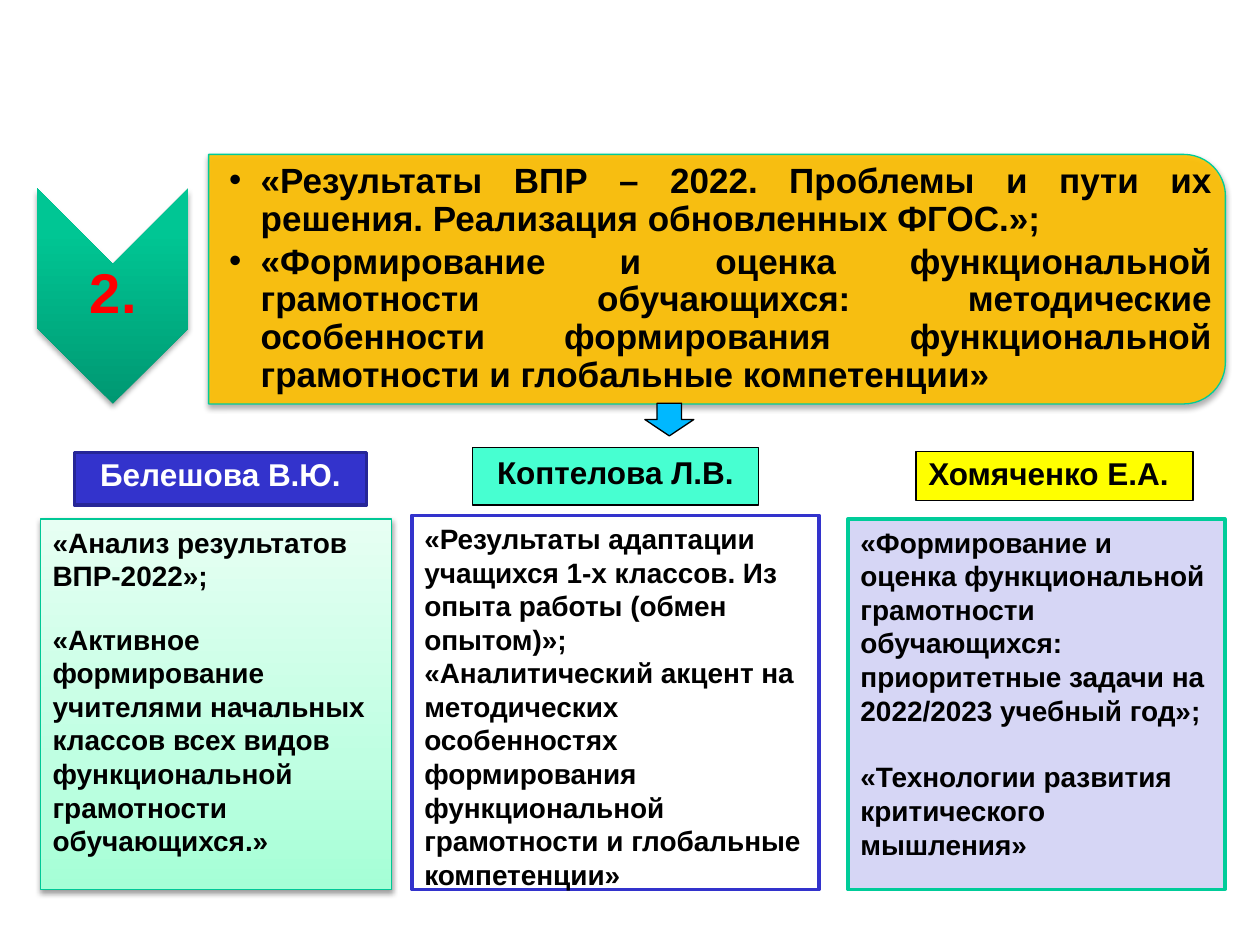
from lxml import etree
from pptx import Presentation
from pptx.dml.color import RGBColor
from pptx.enum import shapes, text
from pptx.oxml import ns
from pptx.util import Pt

COLORS = {
    "black": "000000", "white": "FFFFFF", "red": "FF0000",
    "amber": "FFC000", "teal": "00CC99", "teal_edge": "00C896",
    "sky": "00B8FF", "indigo": "3333CC", "navy": "262697",
    "mint": "47FFD1", "yellow": "FFFF00", "lavender": "D6D6F5",
}
CHEVRON_STOPS = [(0, "009872"), (80, "00C694"), (100, "00C795")]
MINT_STOPS = [(0, "A5FFD6"), (35, "BFFFE2"), (100, "E7FFF3")]
FONT = "Arial"
KIND = shapes.MSO_SHAPE
ALIGN = text.PP_ALIGN
ANCHOR = text.MSO_ANCHOR


def rgb(name):
    return RGBColor.from_string(COLORS[name])


def add_node(parent, tag, **attributes):
    node = etree.SubElement(parent, ns.qn(tag))
    for key, value in attributes.items():
        node.set(key, str(value))
    return node


def write_text(shape, lines, size=16, color="black", align=ALIGN.LEFT,
               anchor=ANCHOR.TOP, margins=(7.2, 3.6, 7.2, 3.6),
               spacing=None, before=0, after=0, bullet=False):
    frame = shape.text_frame
    frame.word_wrap = True
    frame.vertical_anchor = anchor
    (frame.margin_left, frame.margin_top,
     frame.margin_right, frame.margin_bottom) = map(Pt, margins)
    for index, line in enumerate(lines):
        para = frame.add_paragraph() if index else frame.paragraphs[0]
        para.alignment = align
        if spacing:
            para.line_spacing = spacing
        if index and before:
            para.space_before = Pt(before)
        if after:
            para.space_after = Pt(after)
        if bullet:
            settings = para._p.get_or_add_pPr()
            settings.set("marL", str(Pt(18)))
            settings.set("indent", str(-Pt(18)))
            add_node(settings, "a:buFont", typeface=FONT)
            add_node(settings, "a:buChar", char="•")
        span = para.add_run()
        span.text = line
        span.font.name = FONT
        span.font.size = Pt(size)
        span.font.bold = True
        span.font.color.rgb = rgb(color)


class Board:
    def __init__(self, page):
        self.page = page

    def shape(self, kind, place, fill=None, line=None, width=0.75,
              alpha=None, stops=None, shadow=None, rotation=0):
        shape = self.page.shapes.add_shape(kind, *map(Pt, place))
        shape.rotation = rotation
        shape.shadow.inherit = False
        if stops:
            self.gradient(shape, stops)
        else:
            shape.fill.solid()
            shape.fill.fore_color.rgb = rgb(fill)
        if alpha:
            tone = shape._element.spPr.find(".//" + ns.qn("a:srgbClr"))
            add_node(tone, "a:alpha", val=alpha * 1000)
        if line:
            shape.line.color.rgb = rgb(line)
            shape.line.width = Pt(width)
        else:
            shape.line.fill.background()
        if shadow:
            self.shadow(shape, *shadow)
        return shape

    def gradient(self, shape, stops):
        """Vertical gradient, first stop at the bottom."""
        shape.fill.gradient()
        grad = shape._element.spPr.find(ns.qn("a:gradFill"))
        grad.set("rotWithShape", "0")
        for child in list(grad):
            grad.remove(child)
        stop_list = add_node(grad, "a:gsLst")
        for position, color in stops:
            stop = add_node(stop_list, "a:gs", pos=position * 1000)
            add_node(stop, "a:srgbClr", val=color)
        add_node(grad, "a:lin", ang=270 * 60000, scaled=0)

    def shadow(self, shape, blur, distance, alpha):
        effects = shape._element.spPr.find(ns.qn("a:effectLst"))
        outer = add_node(effects, "a:outerShdw", blurRad=Pt(blur),
                         dist=Pt(distance), dir=90 * 60000, rotWithShape=0)
        tone = add_node(outer, "a:srgbClr", val=COLORS["black"])
        add_node(tone, "a:alpha", val=alpha * 1000)

    def label(self, place, words, **style):
        box = self.page.shapes.add_textbox(*map(Pt, place))
        write_text(box, words, **style)

    def card(self, place, words, fill=None, line=None, width=0.75,
             stops=None, shadow=None, **style):
        box = self.shape(KIND.RECTANGLE, place, fill, line, width,
                         stops=stops, shadow=shadow)
        write_text(box, words, **style)


def main():
    deck = Presentation()
    deck.slide_width, deck.slide_height = Pt(720), Pt(540)
    page = deck.slides.add_slide(deck.slide_layouts[6])
    board = Board(page)

    # Numbered chevron
    board.shape(KIND.CHEVRON, (3, 126, 123, 86.4), stops=CHEVRON_STOPS,
                shadow=(3.1, 1.8, 35), rotation=90)
    board.label((21.6, 150.5, 86.4, 36.7), ["2."], size=32, color="red",
                align=ALIGN.CENTER, anchor=ANCHOR.MIDDLE,
                margins=(1.4,) * 4, spacing=0.9)

    # Topic banner
    board.shape(KIND.ROUND_2_SAME_RECTANGLE, (338.4, -131, 142.6, 581),
                "amber", "teal", alpha=90, shadow=(3.1, 1.8, 35), rotation=90)
    board.label((119.5, 95, 573.8, 128.9), [
        "«Результаты ВПР – 2022. Проблемы и пути их решения. "
        "Реализация обновленных ФГОС.»;",
        "«Формирование и оценка функциональной грамотности обучающихся: "
        "методические особенности формирования функциональной грамотности "
        "и глобальные компетенции»",
    ], size=20, align=ALIGN.JUSTIFY, anchor=ANCHOR.MIDDLE,
        margins=(11.5, 0.7, 0.7, 0.7), spacing=0.9, after=3, bullet=True)

    # Arrow to the speakers
    board.shape(KIND.DOWN_ARROW, (368.5, 230.4, 28, 18.7), "sky", "black")

    # First speaker
    board.card((23, 296.6, 200.9, 211.7), [
        "«Анализ результатов ВПР-2022»;",
        "«Активное формирование учителями начальных классов всех видов "
        "функциональной грамотности обучающихся.»",
    ], line="teal_edge", stops=MINT_STOPS, shadow=(3.1, 1.6, 38), before=17)
    board.card((42.5, 258.5, 167, 30.2), ["Белешова В.Ю."], "indigo", "navy",
               2, size=18, color="white", align=ALIGN.CENTER, spacing=0.93)

    # Second speaker
    board.card((270, 255.6, 163.4, 33.1), ["Коптелова Л.В."], "mint", "black",
               size=18, align=ALIGN.CENTER)
    board.card((235.4, 294.5, 232.6, 213.8), [
        "«Результаты адаптации учащихся 1-х классов. Из опыта работы "
        "(обмен опытом)»;",
        "«Аналитический акцент на методических особенностях формирования "
        "функциональной грамотности и глобальные компетенции»",
    ], "white", "indigo", 2)

    # Third speaker
    board.card((523.4, 257.8, 158.4, 28.1), ["Хомяченко Е.А."], "yellow",
               "black", size=18, spacing=0.93)
    board.card((484.6, 296.6, 215.3, 211.7), [
        "«Формирование и оценка функциональной грамотности обучающихся: "
        "приоритетные задачи на 2022/2023 учебный год»;",
        "«Технологии развития критического мышления»",
    ], "lavender", "teal", 2, before=19)

    deck.save("out.pptx")


if __name__ == "__main__":
    main()
